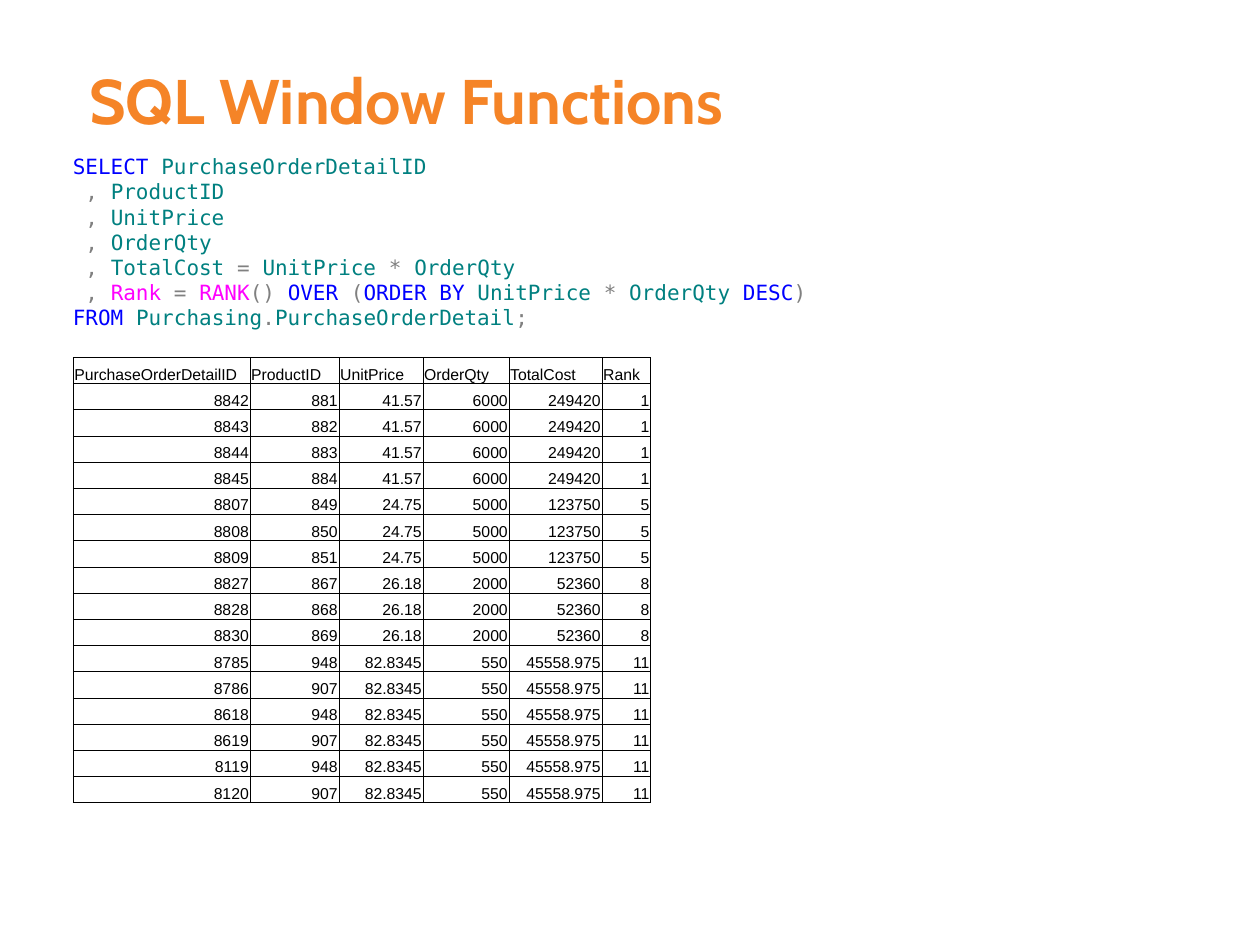
import pptx
import pptx.dml.color
import pptx.enum.text
import pptx.oxml
import pptx.oxml.ns
import pptx.util

PP_ALIGN = pptx.enum.text.PP_ALIGN
MSO_ANCHOR = pptx.enum.text.MSO_ANCHOR

SLIDE_WIDTH = pptx.util.Inches(10)
SLIDE_HEIGHT = pptx.util.Inches(7.5)
GRID_COLUMNS, GRID_ROWS = 100, 75

BLACK, ORANGE = "000000", "F58427"
KEYWORD, NAME, SYMBOL, FUNCTION = "0000FF", "008080", "808080", "FF00FF"
ITEM_START = [(" ", BLACK), (", ", SYMBOL)]
PRODUCT = [("UnitPrice ", NAME), ("* ", SYMBOL)]

QUERY = [
    [("SELECT ", KEYWORD), ("PurchaseOrderDetailID", NAME)],
    ITEM_START + [("ProductID", NAME)],
    ITEM_START + [("UnitPrice", NAME)],
    ITEM_START + [("OrderQty", NAME)],
    ITEM_START + [("TotalCost ", NAME), ("= ", SYMBOL)] + PRODUCT + [("OrderQty", NAME)],
    ITEM_START
    + [("Rank ", FUNCTION), ("= ", SYMBOL), ("RANK", FUNCTION), ("() ", SYMBOL),
       ("OVER ", KEYWORD), ("(", SYMBOL), ("ORDER BY ", KEYWORD)]
    + PRODUCT
    + [("OrderQty ", NAME), ("DESC", KEYWORD), (")", SYMBOL)],
    [("FROM ", KEYWORD), ("Purchasing", NAME), (".", SYMBOL),
     ("PurchaseOrderDetail", NAME), (";", SYMBOL)],
]

HEADERS = ["PurchaseOrderDetailID", "ProductID", "UnitPrice", "OrderQty", "TotalCost", "Rank"]
COLUMN_WIDTHS = [14.04, 7.06, 6.67, 6.83, 7.38, 3.87]
ROW_HEIGHT = 2.08
RANK_GROUPS = [
    (("41.57", "6000", "249420", "1"),
     [("8842", "881"), ("8843", "882"), ("8844", "883"), ("8845", "884")]),
    (("24.75", "5000", "123750", "5"),
     [("8807", "849"), ("8808", "850"), ("8809", "851")]),
    (("26.18", "2000", "52360", "8"),
     [("8827", "867"), ("8828", "868"), ("8830", "869")]),
    (("82.8345", "550", "45558.975", "11"),
     [("8785", "948"), ("8786", "907"), ("8618", "948"),
      ("8619", "907"), ("8119", "948"), ("8120", "907")]),
]


def across(columns):
    return round(SLIDE_WIDTH * columns / GRID_COLUMNS)


def down(rows):
    return round(SLIDE_HEIGHT * rows / GRID_ROWS)


def color(hex_string):
    return pptx.dml.color.RGBColor.from_string(hex_string)


def add_run(p, text, font, size, hex_string, bold=False):
    r = p.add_run()
    r.text = text
    r.font.name = font
    r.font.size = pptx.util.Pt(size)
    r.font.bold = bold
    r.font.color.rgb = color(hex_string)


def add_text_box(s, left, top, width, height):
    sp = s.shapes.add_textbox(across(left), down(top), across(width), down(height))
    tf = sp.text_frame
    tf.word_wrap = True
    return tf


def add_title(s, text):
    tf = add_text_box(s, 5.1, 4.2, 63.2, 7.4)
    tf.margin_left = tf.margin_right = 0
    tf.vertical_anchor = MSO_ANCHOR.MIDDLE
    p = tf.paragraphs[0]
    p._p.get_or_add_pPr().set("marL", str(across(2)))
    add_run(p, text, "Cabin", 36, ORANGE, bold=True)


def add_code(s, lines):
    tf = add_text_box(s, 4.8, 11.7, 89.3, 15.1)
    for index, line in enumerate(lines):
        p = tf.add_paragraph() if index else tf.paragraphs[0]
        for text, hex_string in line:
            add_run(p, text, "DejaVu Sans Mono", 12, hex_string)


def add_borders(cell):
    tcPr = cell._tc.get_or_add_tcPr()
    for side in ("lnL", "lnR", "lnT", "lnB"):
        tcPr.append(pptx.oxml.parse_xml(
            f'<a:{side} {pptx.oxml.ns.nsdecls("a")} w="{pptx.util.Pt(0.25)}">'
            f'<a:solidFill><a:srgbClr val="{BLACK}"/></a:solidFill></a:{side}>'
        ))


def fill_cell(cell, text, alignment):
    add_borders(cell)
    cell.fill.background()
    cell.margin_left = cell.margin_right = across(0.1)
    cell.margin_top, cell.margin_bottom = down(0.1), 0
    cell.vertical_anchor = MSO_ANCHOR.BOTTOM
    p = cell.text_frame.paragraphs[0]
    p.alignment = alignment
    add_run(p, text, "Arial", 9, BLACK)


def add_result_table(s, rows):
    table = s.shapes.add_table(
        len(rows), len(HEADERS), across(5.8), down(28.35),
        across(sum(COLUMN_WIDTHS)), down(ROW_HEIGHT * len(rows)),
    ).table
    table.first_row = table.horz_banding = False
    for column, width in zip(table.columns, COLUMN_WIDTHS):
        column.width = across(width)
    for i, values in enumerate(rows):
        table.rows[i].height = down(ROW_HEIGHT)
        for j, text in enumerate(values):
            fill_cell(table.cell(i, j), text, PP_ALIGN.RIGHT if i else PP_ALIGN.LEFT)


def main():
    prs = pptx.Presentation()
    prs.slide_width, prs.slide_height = SLIDE_WIDTH, SLIDE_HEIGHT
    s = prs.slides.add_slide(prs.slide_layouts[6])
    add_title(s, "SQL Window Functions")
    add_code(s, QUERY)
    records = [ids + shared for shared, members in RANK_GROUPS for ids in members]
    add_result_table(s, [HEADERS] + records)
    prs.save("out.pptx")


if __name__ == "__main__":
    main()
